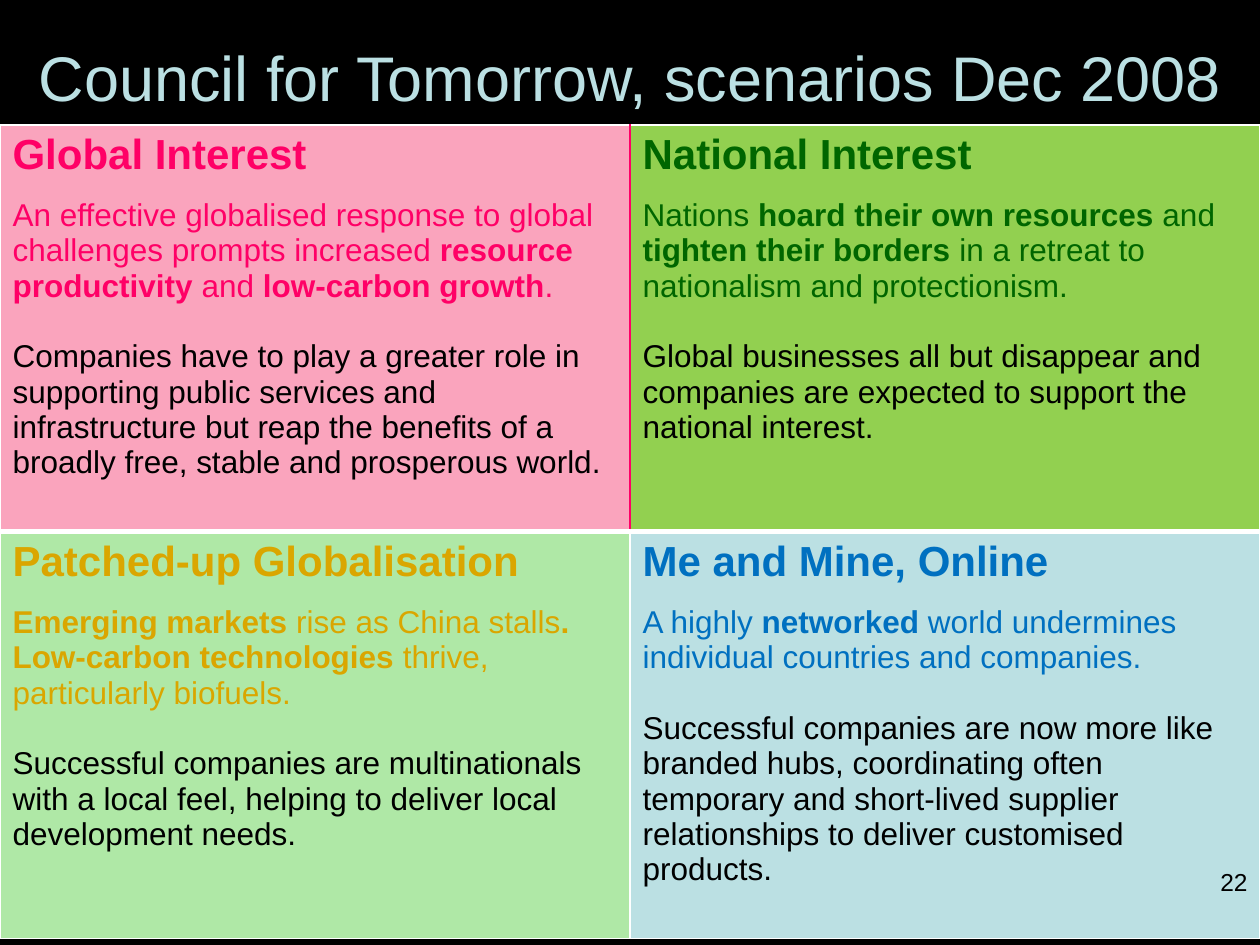
from dataclasses import dataclass

from lxml import etree
from pptx import Presentation
from pptx.dml.color import RGBColor
from pptx.enum.text import MSO_ANCHOR, MSO_AUTO_SIZE, PP_ALIGN
from pptx.oxml.ns import qn
from pptx.util import Pt

MIDDLE = MSO_ANCHOR.MIDDLE
CENTER, RIGHT = PP_ALIGN.CENTER, PP_ALIGN.RIGHT
NO_AUTOFIT = MSO_AUTO_SIZE.NONE
TITLE_ONLY = 5


@dataclass(frozen=True)
class Theme:
    font: str = "Arial"
    background: str = "000000"
    title: str = "BBE0E3"
    body: str = "000000"
    border: str = "FFFFFF"
    accent_border: str = "FF0066"
    title_size: float = 36
    heading_size: float = 24
    body_size: float = 18
    number_size: float = 14


@dataclass(frozen=True)
class Scenario:
    heading: str
    summary: str  # ** switches bold on and off
    companies: str
    ink: str
    fill: str


THEME = Theme()
WIDTH, HEIGHT = 720, 540
TABLE_TOP, ROW_HEIGHT = 71.28, 232.56
HEADING_GAP, SUMMARY_GAP = 11.5, 20.2
THIN, THICK = 1, 3

SCENARIOS = [
    [
        Scenario(
            "Global Interest",
            "An effective globalised response to global challenges prompts increased "
            "**resource productivity **and **low-carbon growth**.",
            "Companies have to play a greater role in supporting public services and "
            "infrastructure but reap the benefits of a broadly free, stable and "
            "prosperous world.",
            "FF0066", "FAA4BD"),
        Scenario(
            "National Interest",
            "Nations **hoard their own resources **and **tighten their borders **"
            "in a retreat to nationalism and protectionism.",
            "Global businesses all but disappear and companies are expected to "
            "support the national interest.",
            "006600", "92D050"),
    ],
    [
        Scenario(
            "Patched-up Globalisation",
            "**Emerging markets **rise as China stalls**. Low-carbon technologies **"
            "thrive, particularly biofuels.",
            "Successful companies are multinationals with a local feel, helping to "
            "deliver local development needs.",
            "DAA600", "AFE8A6"),
        Scenario(
            "Me and Mine, Online",
            "A highly **networked** world undermines individual countries and companies.",
            "Successful companies are now more like branded hubs, coordinating often "
            "temporary and short-lived supplier relationships to deliver customised "
            "products.",
            "0070C0", "BBE0E3"),
    ],
]


def style(paragraph, size, color):
    font = paragraph.font
    font.name, font.size = THEME.font, Pt(size)
    font.color.rgb = RGBColor.from_string(color)


def write_marked(paragraph, text):
    """Write text whose bold parts stand between ** marks."""
    for index, part in enumerate(text.split("**")):
        if part:
            run = paragraph.add_run()
            run.text = part
            run.font.bold = index % 2 == 1


def add_border(cell, side, color, width):
    line = etree.SubElement(cell._tc.get_or_add_tcPr(), qn(f"a:ln{side}"), w=str(Pt(width)))
    fill = etree.SubElement(line, qn("a:solidFill"))
    etree.SubElement(fill, qn("a:srgbClr"), val=color)


def fill_cell(cell, scenario, row, column):
    # Borders: accent between the top cells, thick line between the rows
    inner_side = "R" if column == 0 else "L"
    inner_edge = "B" if row == 0 else "T"
    for side in "LRTB":
        accent = row == 0 and side == inner_side
        add_border(cell, side,
                   THEME.accent_border if accent else THEME.border,
                   THICK if side == inner_edge else THIN)
    cell.fill.solid()
    cell.fill.fore_color.rgb = RGBColor.from_string(scenario.fill)

    # Heading, summary and effect on companies
    heading = cell.text_frame.paragraphs[0]
    summary = cell.text_frame.add_paragraph()
    companies = cell.text_frame.add_paragraph()
    write_marked(heading, f"**{scenario.heading}**")
    write_marked(summary, scenario.summary)
    write_marked(companies, scenario.companies)
    style(heading, THEME.heading_size, scenario.ink)
    style(summary, THEME.body_size, scenario.ink)
    style(companies, THEME.body_size, THEME.body)
    summary.space_before = Pt(HEADING_GAP)
    companies.space_before = Pt(SUMMARY_GAP)


def add_title(slide, text):
    title = slide.shapes.title
    title.left, title.top, title.width, title.height = Pt(0), Pt(21.6), Pt(WIDTH), Pt(43.92)
    frame = title.text_frame
    frame.text = text
    frame.auto_size = NO_AUTOFIT
    frame.vertical_anchor = MIDDLE
    paragraph = frame.paragraphs[0]
    paragraph.alignment = CENTER
    style(paragraph, THEME.title_size, THEME.title)


def add_scenario_table(slide):
    rows, columns = len(SCENARIOS), len(SCENARIOS[0])
    table = slide.shapes.add_table(rows, columns, Pt(0), Pt(TABLE_TOP),
                                   Pt(WIDTH), Pt(rows * ROW_HEIGHT)).table
    table.first_row = table.horz_banding = False
    for r, scenarios in enumerate(SCENARIOS):
        for c, scenario in enumerate(scenarios):
            fill_cell(table.cell(r, c), scenario, r, c)


def add_page_number(slide, number):
    box = slide.shapes.add_textbox(Pt(671.76), Pt(491.76), Pt(48.24), Pt(37.44))
    box.text_frame.word_wrap = True
    paragraph = box.text_frame.paragraphs[0]
    paragraph.text = number
    paragraph.alignment = RIGHT
    style(paragraph, THEME.number_size, THEME.body)


def main():
    deck = Presentation()
    deck.slide_width, deck.slide_height = Pt(WIDTH), Pt(HEIGHT)
    slide = deck.slides.add_slide(deck.slide_layouts[TITLE_ONLY])
    slide.background.fill.solid()
    slide.background.fill.fore_color.rgb = RGBColor.from_string(THEME.background)

    add_title(slide, "Council for Tomorrow, scenarios Dec 2008")
    add_scenario_table(slide)
    add_page_number(slide, "22")
    deck.save("out.pptx")


if __name__ == "__main__":
    main()
